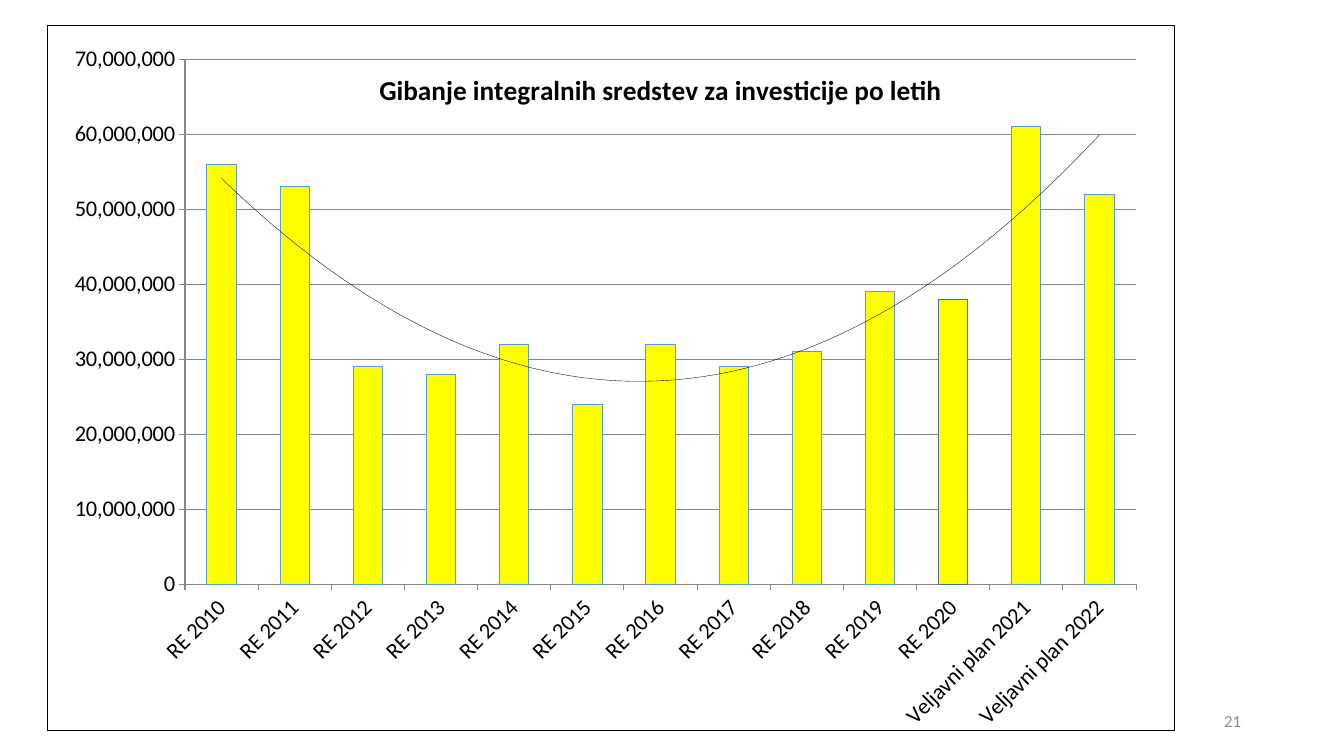
"""Build a slide with a column chart of yearly investment funds and its trend."""
from typing import NamedTuple

from lxml import etree
from pptx import Presentation, util as u
from pptx.chart.data import CategoryChartData
from pptx.dml.color import RGBColor
from pptx.enum import chart as ch, text
from pptx.oxml import parse_xml
from pptx.oxml.ns import nsdecls, qn

EMU_PER_PX = 914400 / 100.8
FONT = "Calibri"
BLACK, YELLOW, BLUE, DARK_BLUE = "000000", "FFFF00", "5B9BD5", "41719C"
GRID, PAGE_GREY = "868686", "8C8C8C"


class Bar(NamedTuple):
    label: str
    millions: int


class Box(NamedTuple):
    left: int
    top: int
    width: int
    height: int


BARS = [
    Bar("RE 2010", 56),
    Bar("RE 2011", 53),
    Bar("RE 2012", 29),
    Bar("RE 2013", 28),
    Bar("RE 2014", 32),
    Bar("RE 2015", 24),
    Bar("RE 2016", 32),
    Bar("RE 2017", 29),
    Bar("RE 2018", 31),
    Bar("RE 2019", 39),
    Bar("RE 2020", 38),
    Bar("Veljavni plan 2021", 61),
    Bar("Veljavni plan 2022", 52),
]
CHART = Box(47, 25, 1128, 706)
PLOT = Box(138, 34, 952, 526)
TITLE = Box(327, 41, 580, 34)
PAGE_NUMBER = Box(949, 701, 302, 40)


def px(n: int) -> int:
    return round(n * EMU_PER_PX)


def rgb(color: str) -> RGBColor:
    return RGBColor.from_string(color)


def set_font(font, size: float, color: str, bold: bool = False) -> None:
    font.name, font.size, font.bold = FONT, u.Pt(size), bold
    font.color.rgb = rgb(color)


def set_line(line, color: str) -> None:
    line.color.rgb = rgb(color)
    line.width = u.Pt(0.75)


def line_props(color: str, points: float, fill: str = "") -> etree._Element:
    return parse_xml(
        f'<c:spPr {nsdecls("c", "a")}>{fill}<a:ln w="{u.Pt(points)}"><a:solidFill>'
        f'<a:srgbClr val="{color}"/></a:solidFill></a:ln></c:spPr>')


def manual_layout(box: Box, inner: bool = False) -> etree._Element:
    target = '<c:layoutTarget val="inner"/>' if inner else ""
    size = (f'<c:w val="{box.width / CHART.width:.3f}"/>'
            f'<c:h val="{box.height / CHART.height:.3f}"/>') if inner else ""
    return parse_xml(
        f'<c:layout {nsdecls("c")}><c:manualLayout>{target}'
        '<c:xMode val="edge"/><c:yMode val="edge"/>'
        f'<c:x val="{box.left / CHART.width:.3f}"/>'
        f'<c:y val="{box.top / CHART.height:.3f}"/>{size}'
        '</c:manualLayout></c:layout>')


def drop_layout(element) -> None:
    for layout in element.findall(qn("c:layout")):
        element.remove(layout)


def add_trend(series) -> None:
    trend = parse_xml(
        f'<c:trendline {nsdecls("c")}><c:trendlineType val="poly"/><c:order val="2"/>'
        '<c:dispRSqr val="0"/><c:dispEq val="0"/></c:trendline>')
    trend.insert(0, line_props(BLACK, 0.25))
    series._element.find(qn("c:cat")).addprevious(trend)


def style_axes(chart) -> None:
    for axis in (chart.category_axis, chart.value_axis):
        set_line(axis.format.line, GRID)
        set_font(axis.tick_labels.font, 16, BLACK)
        axis.major_tick_mark = ch.XL_TICK_MARK.OUTSIDE
        axis.minor_tick_mark = ch.XL_TICK_MARK.NONE
    labels = chart.category_axis._element.find(qn("c:txPr"))
    labels.find(qn("a:bodyPr")).set("rot", "-2700000")
    values = chart.value_axis
    values.minimum_scale, values.maximum_scale = 0, 70_000_000
    values.major_unit = 10_000_000
    values.has_major_gridlines = True
    set_line(values.major_gridlines.format.line, GRID)
    values.tick_labels.number_format = "#,##0"
    values.tick_labels.number_format_is_linked = False


def add_title(chart, title: str) -> None:
    chart.has_title = True
    p = chart.chart_title.text_frame.paragraphs[0]
    p.text = title
    set_font(p.font, 19.5, BLACK, bold=True)
    element = chart.chart_title._element
    drop_layout(element)
    overlay = element.find(qn("c:overlay"))
    overlay.set("val", "1")
    overlay.addprevious(manual_layout(TITLE))


def add_funds_chart(s) -> None:
    data = CategoryChartData(number_format="#,##0")
    data.categories = [bar.label for bar in BARS]
    data.add_series("Series 1", [bar.millions * 1_000_000 for bar in BARS])
    chart = s.shapes.add_chart(
        ch.XL_CHART_TYPE.COLUMN_CLUSTERED, *map(px, CHART), data).chart
    chart.has_legend = False
    set_font(chart.font, 16, BLACK)
    add_title(chart, "Gibanje integralnih sredstev za investicije po letih")
    style_axes(chart)

    plot = chart.plots[0]
    plot.gap_width, plot.vary_by_categories = 150, False
    series = plot.series[0]
    labels = [bar.label for bar in BARS]
    point = series.points[labels.index("RE 2020")]
    for item, outline in ((series, BLUE), (point, DARK_BLUE)):
        item.format.fill.solid()
        item.format.fill.fore_color.rgb = rgb(YELLOW)
        set_line(item.format.line, outline)
    add_trend(series)

    root = chart._chartSpace
    frame = root.find(qn("c:chart"))
    area = frame.find(qn("c:plotArea"))
    drop_layout(area)
    area.insert(0, manual_layout(PLOT, inner=True))
    frame.addnext(line_props(BLACK, 0.75, "<a:noFill/>"))


def add_page_number(s, number: str) -> None:
    tf = s.shapes.add_textbox(*map(px, PAGE_NUMBER)).text_frame
    tf.word_wrap = True
    tf.vertical_anchor = text.MSO_ANCHOR.MIDDLE
    p = tf.paragraphs[0]
    p.text, p.alignment = number, text.PP_ALIGN.RIGHT
    set_font(p.font, 12, PAGE_GREY)


def main() -> None:
    prs = Presentation()
    prs.slide_width, prs.slide_height = px(1344), px(756)
    s = prs.slides.add_slide(prs.slide_layouts[6])
    add_funds_chart(s)
    add_page_number(s, "21")
    prs.save("out.pptx")


if __name__ == "__main__":
    main()
